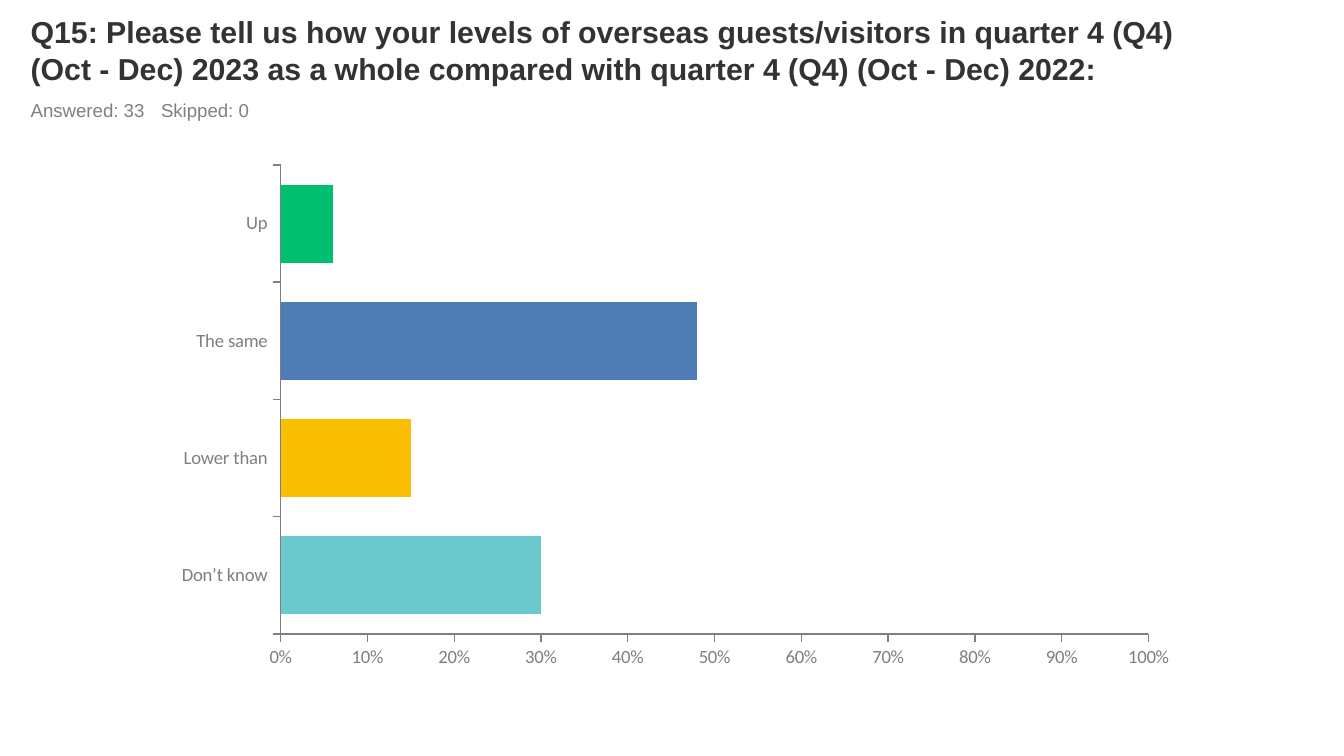
"""Build the survey slide on overseas visitor levels."""
import pptx
import pptx.chart.data
import pptx.dml.color
import pptx.enum.chart
import pptx.enum.text
import pptx.oxml
import pptx.oxml.ns
import pptx.util

Inches, Pt = pptx.util.Inches, pptx.util.Pt
ENUM = pptx.enum.chart

TITLE = (
    "Q15: Please tell us how your levels of overseas guests/visitors in quarter 4 (Q4)\v"
    "(Oct - Dec) 2023 as a whole compared with quarter 4 (Q4) (Oct - Dec) 2022:"
)
COUNTS = "Answered: 33\tSkipped: 0"
BARS = [
    ("Up", 0.06, "00BF6F"),
    ("The same", 0.48, "507CB6"),
    ("Lower than", 0.15, "F9BE00"),
    ("Don’t know", 0.3, "6BC8CD"),
]
DARK, GREY, AXIS = "333333", "808080", "7F7F7F"
LEFT, WIDTH = 0.13, 9


def rgb(code):
    return pptx.dml.color.RGBColor.from_string(code)


def style(font, size, color, name, bold=False):
    font.size, font.name, font.bold = Pt(size), name, bold
    font.color.rgb = rgb(color)


def add_text(slide, text, top, height, size, color, bold=False, anchor="TOP", tab=None):
    box = slide.shapes.add_textbox(Inches(LEFT), Inches(top), Inches(WIDTH), Inches(height))
    frame = box.text_frame
    frame.word_wrap = True
    frame.vertical_anchor = pptx.enum.text.MSO_ANCHOR[anchor]
    para = frame.paragraphs[0]
    para.text = text
    for run in para.runs:
        style(run.font, size, color, "Arial", bold)
    if tab:
        space = pptx.oxml.ns.nsdecls("a")
        stops = f'<a:tabLst {space}><a:tab pos="{Inches(tab)}" algn="l"/></a:tabLst>'
        para._p.get_or_add_pPr().append(pptx.oxml.parse_xml(stops))


def style_axis(axis):
    axis.has_major_gridlines = False
    axis.major_tick_mark = ENUM.XL_TICK_MARK.OUTSIDE
    axis.minor_tick_mark = ENUM.XL_TICK_MARK.NONE
    axis.format.line.color.rgb = rgb(AXIS)
    axis.format.line.width = Pt(0.75)
    style(axis.tick_labels.font, 10, AXIS, "Calibri")


def add_bars(slide):
    names, vals, colors = zip(*BARS)
    data = pptx.chart.data.CategoryChartData(number_format="0%")
    data.categories = names
    data.add_series("Series 1", vals)
    area = [Inches(n) for n in (1.2, 1.15, 7.65, 3.9)]
    chart = slide.shapes.add_chart(ENUM.XL_CHART_TYPE.BAR_CLUSTERED, *area, data).chart
    chart.has_legend = chart.has_title = False
    style(chart.font, 18, DARK, "Calibri")

    plot = chart.plots[0]
    plot.gap_width, plot.overlap = 50, 100
    plot.vary_by_categories = False
    series = plot.series[0]
    series.invert_if_negative = False
    series.format.fill.solid()
    series.format.fill.fore_color.rgb = rgb(colors[0])
    for i, color in enumerate(colors):
        fill = series.points[i].format.fill
        fill.solid()
        fill.fore_color.rgb = rgb(color)

    cats, scale = chart.category_axis, chart.value_axis
    style_axis(cats)
    style_axis(scale)
    cats.reverse_order = True
    cats.tick_label_position = ENUM.XL_TICK_LABEL_POSITION.LOW
    scale._element.find(pptx.oxml.ns.qn("c:crosses")).set("val", "max")
    scale.minimum_scale, scale.maximum_scale, scale.major_unit = 0, 1, 0.1
    scale.tick_labels.number_format = "0%"
    scale.tick_labels.number_format_is_linked = False


def main():
    deck = pptx.Presentation()
    deck.slide_width = Inches(10)
    deck.slide_height = deck.slide_width * 9 // 16
    slide = deck.slides.add_slide(deck.slide_layouts[6])
    add_text(slide, TITLE, 0.09, 0.6, 16.2, DARK, bold=True, anchor="BOTTOM")
    add_text(slide, COUNTS, 0.69, 0.26, 10, GREY, tab=0.97)
    add_bars(slide)
    deck.save("out.pptx")


if __name__ == "__main__":
    main()
